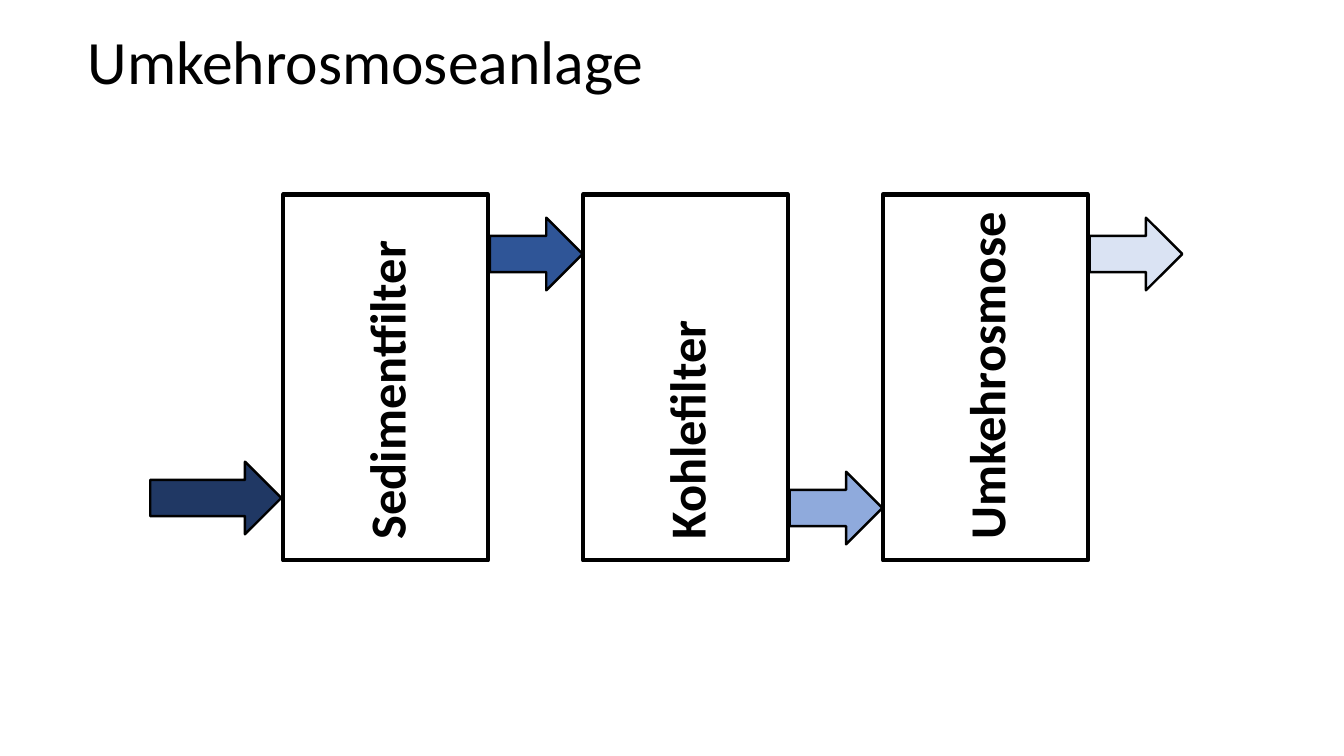
"""Build a slide showing the three stages of a reverse osmosis unit."""
from dataclasses import dataclass

from pptx import Presentation
from pptx.dml.color import RGBColor
from pptx.enum.shapes import MSO_SHAPE as Kind
from pptx.enum.text import MSO_ANCHOR as Anchor, PP_ALIGN as Align
from pptx.shapes.autoshape import Shape
from pptx.slide import Slide
from pptx.text.text import TextFrame
from pptx.util import Inches, Pt

BLACK = RGBColor(0x00, 0x00, 0x00)
WHITE = RGBColor(0xFF, 0xFF, 0xFF)
NAVY = RGBColor(0x20, 0x38, 0x64)
BLUE = RGBColor(0x2F, 0x55, 0x97)
SKY = RGBColor(0x8F, 0xAA, 0xDC)
PALE = RGBColor(0xDA, 0xE3, 0xF3)

WIDE, HIGH = Inches(13.33), Inches(7.5)
STEP = 22.31
MID_X, MID_Y = 28.69, 49.93
LONG, DEEP = 27.23, 27.07


@dataclass
class Area:
    """Hold a place and size in percent of the slide."""
    left: float
    top: float
    width: float
    height: float

    def emu(self) -> tuple[int, int, int, int]:
        """Return the place and size in slide units."""
        return (int(WIDE * self.left / 100), int(HIGH * self.top / 100),
                int(WIDE * self.width / 100), int(HIGH * self.height / 100))


@dataclass
class Flow:
    """Describe one arrow of the water flow."""
    area: Area
    fill: RGBColor


STAGES = ("Sedimentfilter", "Kohlefilter", "Umkehrosmose")
FLOWS = [Flow(Area(11.18, 61.07, 9.75, 9.6), NAVY)] + [
    Flow(Area(36.45 + STEP * col, top, 6.9, 9.6), fill)
    for col, (top, fill) in enumerate(((28.8, BLUE), (62.4, SKY), (28.8, PALE)))
]


def style(item: object, form: dict[str, object]) -> None:
    """Set each format value on the item."""
    for name, value in form.items():
        setattr(item, name, value)


def draw(slide: Slide, kind: Kind, area: Area, fill: RGBColor, line: float) -> Shape:
    """Draw a filled shape with a black outline."""
    shape = slide.shapes.add_shape(kind, *area.emu())
    shape.shadow.inherit = False
    shape.fill.solid()
    shape.fill.fore_color.rgb = fill
    shape.line.color.rgb = BLACK
    shape.line.width = Pt(line)
    return shape


def write(frame: TextFrame, text: str, size: int, bold: bool, form: dict[str, object]) -> None:
    """Write one left-aligned line of text."""
    style(frame, {"word_wrap": True, **form})
    para = frame.paragraphs[0]
    para.alignment = Align.LEFT
    run = para.add_run()
    run.text = text
    style(run.font, {"name": "Calibri", "size": Pt(size), "bold": bold})
    run.font.color.rgb = BLACK


def stage(slide: Slide, col: int, text: str) -> None:
    """Draw an upright filter box with its name."""
    area = Area(MID_X + STEP * col - LONG / 2, MID_Y - DEEP / 2, LONG, DEEP)
    shape = draw(slide, Kind.RECTANGLE, area, WHITE, 3)
    shape.rotation = 270
    write(shape.text_frame, text, 36, True,
          {"vertical_anchor": Anchor.MIDDLE, "margin_left": Inches(0.21)})


def main() -> None:
    """Build and save the slide."""
    deck = Presentation()
    style(deck, {"slide_width": WIDE, "slide_height": HIGH})
    slide = deck.slides.add_slide(deck.slide_layouts[6])
    for col, text in enumerate(STAGES):
        stage(slide, col, text)
    for flow in FLOWS:
        draw(slide, Kind.RIGHT_ARROW, flow.area, flow.fill, 1.75)
    title = slide.shapes.add_textbox(*Area(5.78, 3.47, 84.1, 15.07).emu())
    write(title.text_frame, "Umkehrosmoseanlage", 44, False,
          {"vertical_anchor": Anchor.TOP})
    title.text_frame.paragraphs[0].line_spacing = 0.9
    deck.save("out.pptx")


if __name__ == "__main__":
    main()
